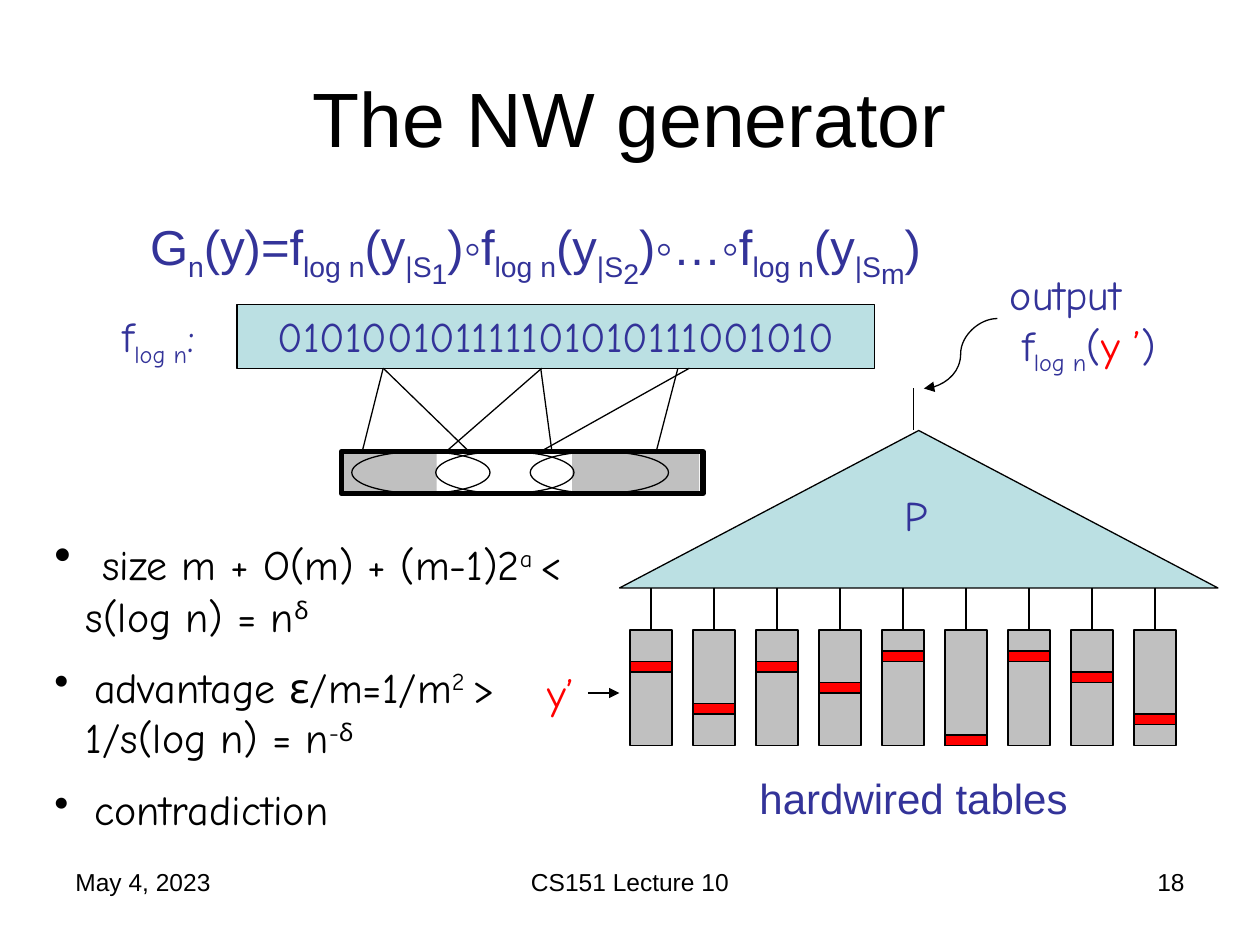
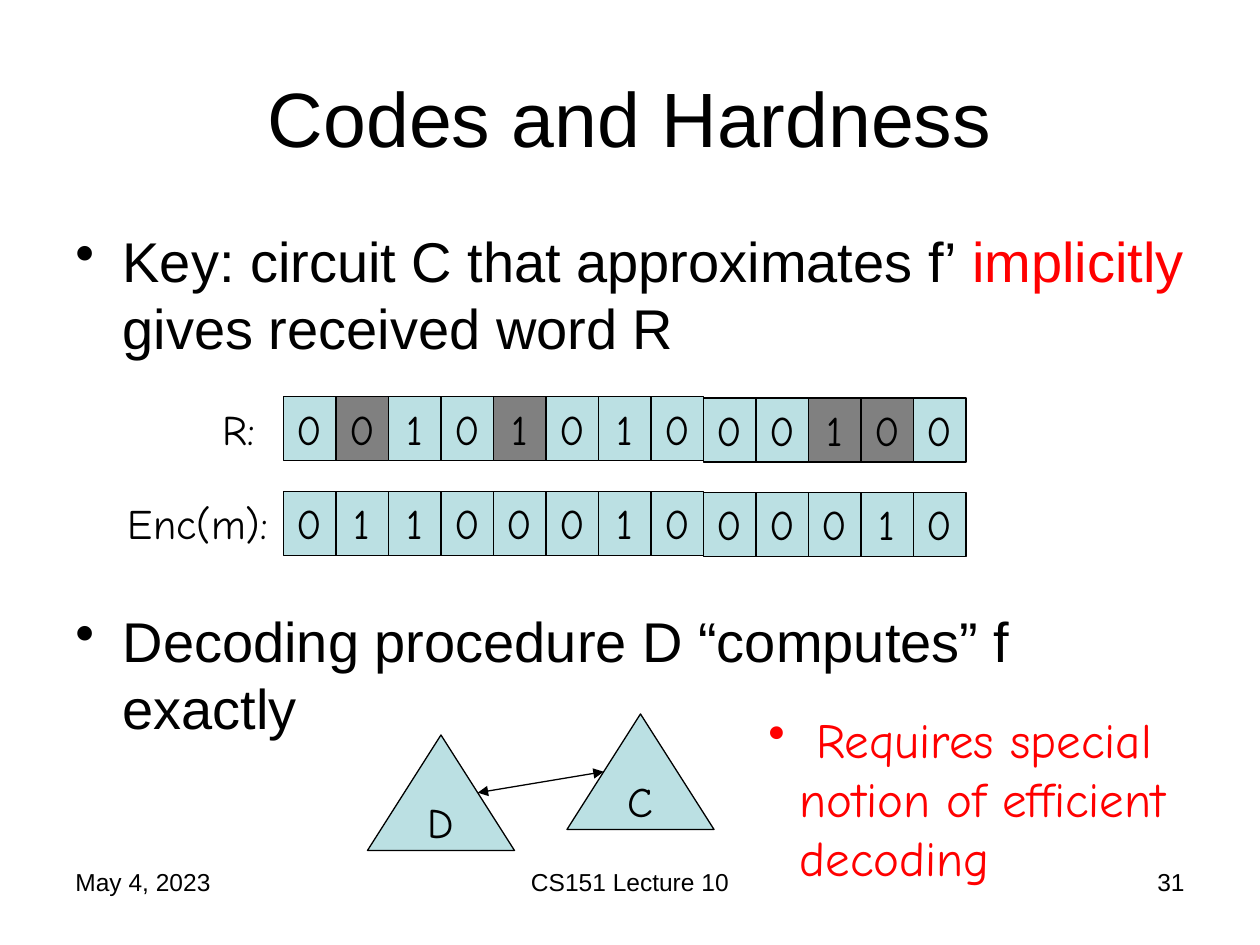
from dataclasses import dataclass

from lxml.etree import SubElement
from pptx import Presentation
from pptx.dml.color import RGBColor
from pptx.enum.shapes import MSO_CONNECTOR, MSO_SHAPE
from pptx.enum.text import MSO_ANCHOR, PP_ALIGN
from pptx.oxml.ns import qn
from pptx.util import Pt


@dataclass(frozen=True)
class Theme:
    sans: str = "Arial"
    hand: str = "Comic Neue"
    black: str = "000000"
    ink: str = "333399"
    red: str = "FF0000"
    teal: str = "BBE0E3"
    silver: str = "C0C0C0"
    gray: str = "808080"
    title: int = 44
    body: int = 32
    large: int = 28
    label: int = 24
    footer: int = 14
    hairline: float = 0.75
    frame: float = 3


@dataclass
class Span:
    """A piece of text that departs from its paragraph's style; base is in percent."""
    text: str
    base: int = 0
    color: str = ""
    size: int = 0


LEFT, CENTER, RIGHT = PP_ALIGN.LEFT, PP_ALIGN.CENTER, PP_ALIGN.RIGHT


class Deck:
    def __init__(self, theme):
        self.theme = theme
        self.prs = Presentation()
        self.prs.slide_width, self.prs.slide_height = Pt(720), Pt(540)

    def new_slide(self, title, number):
        t = self.theme
        self.s = self.prs.slides.add_slide(self.prs.slide_layouts[6])
        self.text((36, 21.6, 648, 90), [title], t.title, t.black, t.sans, CENTER,
                  anchor=MSO_ANCHOR.MIDDLE)
        for x, w, words, align in ((36, 168, "May 4, 2023", LEFT),
                                   (246, 228, "CS151 Lecture 10", CENTER),
                                   (516, 168, number, RIGHT)):
            self.text((x, 492, w, 37.5), [words], t.footer, t.black, t.sans, align)

    def fill_text(self, sp, paragraphs, size, color, font, align=LEFT, gap=0,
                  hang=0, bullet=False, anchor=MSO_ANCHOR.TOP, wrap=True):
        """Write paragraphs, each a string or a list of strings and Spans."""
        tf = sp.text_frame
        tf.word_wrap, tf.vertical_anchor = wrap, anchor
        for i, pieces in enumerate(paragraphs):
            p = tf.add_paragraph() if i else tf.paragraphs[0]
            p.alignment = align
            if i:
                p.space_before = Pt(gap)
            if bullet:
                pPr = p._p.get_or_add_pPr()
                pPr.set("marL", str(Pt(hang)))
                pPr.set("indent", str(-Pt(hang)))
                SubElement(pPr, qn("a:buChar")).set("char", "•")
            for piece in [pieces] if isinstance(pieces, str) else pieces:
                span = Span(piece) if isinstance(piece, str) else piece
                r = p.add_run()
                r.text = span.text
                r.font.name, r.font.size = font, Pt(span.size or size)
                r.font.color.rgb = RGBColor.from_string(span.color or color)
                if span.base:
                    r._r.get_or_add_rPr().set("baseline", str(span.base * 1000))

    def text(self, box, paragraphs, size, color, font, align=LEFT, **layout):
        sp = self.s.shapes.add_textbox(*map(Pt, box))
        self.fill_text(sp, paragraphs, size, color, font, align, **layout)
        return sp

    def label(self, box, paragraphs, color=None):
        t = self.theme
        return self.text(box, paragraphs, t.label, color or t.ink, t.hand)

    def shape(self, kind, box, fill=None, line=Theme.hairline, words="",
              color=Theme.black, **layout):
        t = self.theme
        sp = self.s.shapes.add_shape(kind, *map(Pt, box))
        sp.shadow.inherit = False
        if fill:
            sp.fill.solid()
            sp.fill.fore_color.rgb = RGBColor.from_string(fill)
        else:
            sp.fill.background()
        if line:
            sp.line.width = Pt(line)
            sp.line.color.rgb = RGBColor.from_string(t.black)
        else:
            sp.line.fill.background()
        if words:
            self.fill_text(sp, [words], t.label, color, t.hand, CENTER, **layout)
        return sp

    def rect(self, box, fill=None, **style):
        return self.shape(MSO_SHAPE.RECTANGLE, box, fill, **style)

    def line(self, start, end, ends=(), kind=MSO_CONNECTOR.STRAIGHT):
        """Draw a connector; ends names the arrowheads, headEnd before tailEnd."""
        c = self.s.shapes.add_connector(kind, *map(Pt, (*start, *end)))
        c.line.width = Pt(self.theme.hairline)
        c.line.color.rgb = RGBColor.from_string(self.theme.black)
        for end_name in ends:
            SubElement(c.line._get_or_add_ln(), qn(f"a:{end_name}")).set("type", "triangle")
        SubElement(c._element.spPr, qn("a:effectLst"))
        return c


def sub(text):
    return Span(text, -25)


def sup(text):
    return Span(text, 30)


def generator_formula():
    """G_n(y) as the concatenation of f on the sets S1, S2, ..., Sm."""
    spans = ["G", sub("n"), "(y)="]
    for joiner, index in (("", "1"), (")◦", "2"), (")◦…◦", "m")):
        spans += [joiner + "f", sub("log n"), "(y", sub("|S"), Span(index, -40)]
    return spans + [")"]


def draw_truth_table_and_seed(deck):
    t = deck.theme
    seed_y, seed_h = 258, 24
    for x, w in ((327, 72.5), (195, 54.5)):
        deck.rect((x, seed_y, w, seed_h), t.silver, line=0)
    deck.rect((135.4, 174, 364.3, 36.5), t.teal, words="010100101111101010111001010",
              color=t.ink)
    deck.label((63, 174, 73, 36), [["f", sub("log n"), ":"]])
    deck.rect((195, seed_y, 206.8, seed_h), line=t.frame)
    for x in (201, 249, 303):
        deck.shape(MSO_SHAPE.OVAL, (x, seed_y, 79, seed_h))
    for bit_x, seed_x in ((219, 207), (219, 268), (309.6, 255),
                          (309, 315.4), (394, 309), (387.4, 375)):
        deck.line((bit_x, 210.4), (seed_x, seed_y))


def draw_predictor(deck):
    t = deck.theme
    deck.shape(MSO_SHAPE.ISOSCELES_TRIANGLE, (354, 246, 342, 90), t.teal)
    deck.label((510, 276, 36, 36), ["P"])
    deck.line((522, 222), (522, 246))
    output = deck.label((570, 150, 108, 65),
                        ["output", ["f", sub("log n"), "(", Span("y ’", color=t.red), ")"]])
    output.text_frame.paragraphs[1]._p.get_or_add_pPr().set("marL", str(Pt(7)))
    deck.line((570, 182), (528, 222), ["tailEnd"], MSO_CONNECTOR.CURVE)


def draw_hardwired_tables(deck):
    t = deck.theme
    top, width = 360, 24
    for i, entry in enumerate((18, 42, 18, 30, 12, 60, 12, 24, 48)):
        x = 360 + 36 * i
        table = deck.rect((x, top, width, 66), t.silver)
        deck.rect((x, top + entry, width, 6), t.red)
        stem = deck.line((x + width / 2, 336), (x + width / 2, top))
        stem.end_connect(table, 0)
    deck.label((306, 378, 36, 36), ["y’"], t.red)
    deck.line((336, 396), (354, 396), ["tailEnd"])
    deck.text((402, 438, 240, 36), ["hardwired tables"], t.label, t.ink, t.sans, CENTER)


def generator_slide(deck):
    t = deck.theme
    deck.new_slide("The NW generator", "18")
    draw_truth_table_and_seed(deck)
    draw_predictor(deck)
    draw_hardwired_tables(deck)
    deck.text((24, 300, 306, 184.5), [
        [Span(" ", size=t.large), "size m + O(m) + (m-1)2", sup("a "),
         "< s(log n) = n", sup("δ")],
        [sup(" "), "advantage ε/m=1/m", sup("2 "), "> 1/s(log n) = n", sup("-δ")],
        [sup(" "), "contradiction"],
    ], t.label, t.black, t.hand, gap=12, hang=18, bullet=True)
    deck.text((24, 120, 564, 42), [generator_formula()], t.large, t.ink, t.sans, CENTER)


def draw_codewords(deck):
    """Received word over codeword; positions where they differ are dark."""
    t = deck.theme
    received, codeword = "0010101000100", "0110001000010"
    cell, first_block = 30, 8
    for word, top, name, name_x in ((received, 226.8, "R:", 120),
                                    (codeword, 280.8, "Enc(m):", 66)):
        deck.label((name_x, top, 108, 36), [name], t.black)
        for i, bit in enumerate(word):
            wrong = word is received and bit != codeword[i]
            y = top if i < first_block else top + 0.75
            deck.rect((162 + cell * i, y, cell, 36.5), t.gray if wrong else t.teal, words=bit)


def hardness_slide(deck):
    t = deck.theme
    deck.new_slide("Codes and Hardness", "31")
    deck.text((36, 126, 648, 356.4), [
        ["Key: circuit C that approximates f’ ", Span("implicitly", color=t.red),
         " gives received word R"],
        "Decoding procedure D “computes” f exactly",
    ], t.body, t.black, t.sans, gap=140, hang=27, bullet=True)
    draw_codewords(deck)
    for name, x, y in (("D", 210, 420), ("C", 324, 408)):
        deck.shape(MSO_SHAPE.ISOSCELES_TRIANGLE, (x, y, 84, 66), t.teal, words=name,
                   anchor=MSO_ANCHOR.MIDDLE, wrap=False)
    deck.line((345, 441), (273, 453), ["headEnd", "tailEnd"])
    deck.text((432, 402, 258, 108), [" Requires special notion of efficient decoding"],
              t.large, t.red, t.hand, hang=18, bullet=True)


def main():
    deck = Deck(Theme())
    generator_slide(deck)
    hardness_slide(deck)
    deck.prs.save("out.pptx")


if __name__ == "__main__":
    main()
